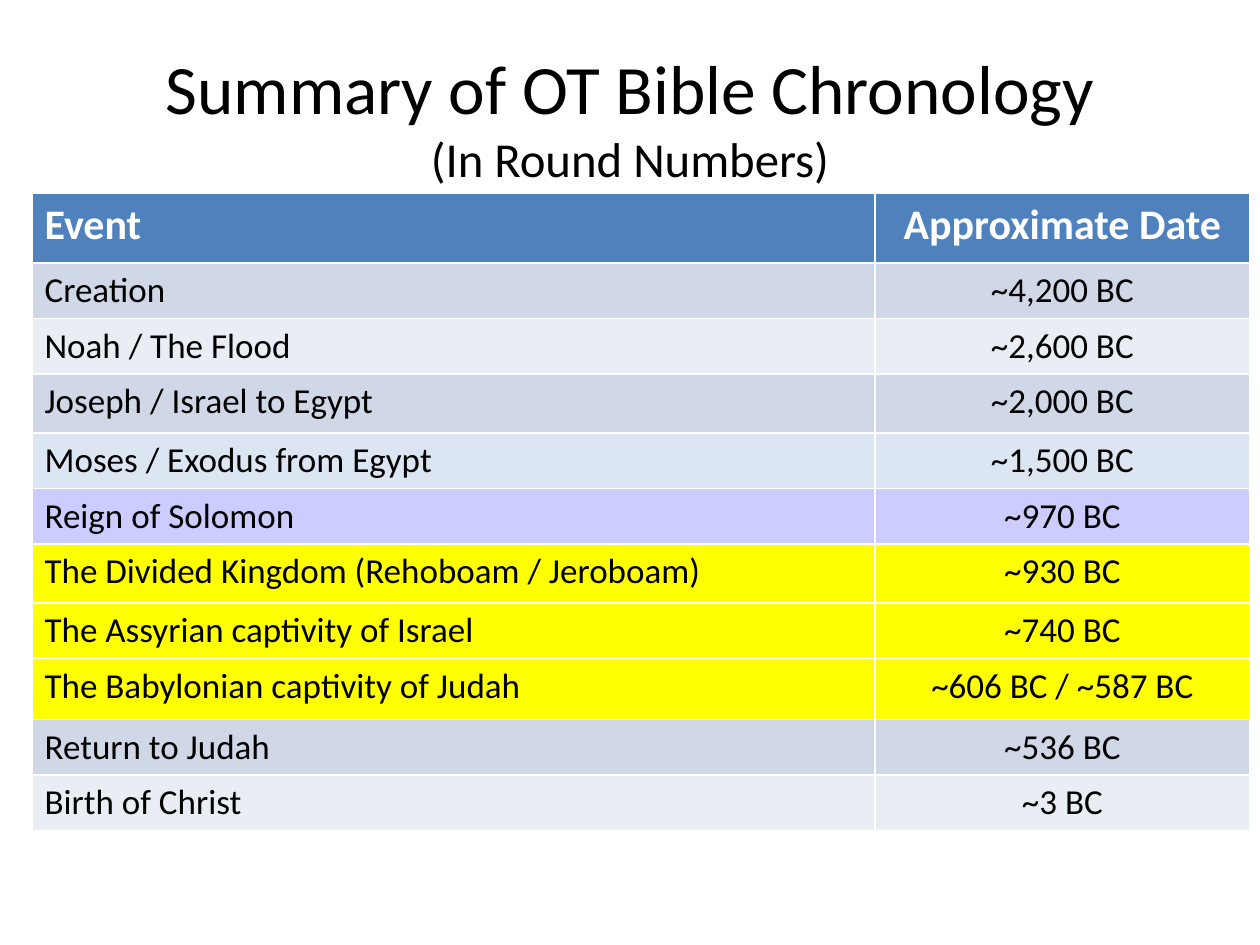
from dataclasses import dataclass
from lxml.etree import SubElement
from pptx import Presentation
from pptx.dml.color import RGBColor as RGB
from pptx.enum.text import MSO_ANCHOR as ANCHOR, MSO_AUTO_SIZE as FIT, PP_ALIGN as ALIGN
from pptx.oxml.ns import qn
from pptx.util import Pt


@dataclass(frozen=True)
class Theme:
    font: str = "Calibri"
    ink: str = "000000"
    white: str = "FFFFFF"
    header: str = "4F81BD"
    dark: str = "D0D8E8"
    light: str = "E9EDF4"
    pale: str = "DCE6F2"
    lilac: str = "CCCCFF"
    yellow: str = "FFFF00"
    title: float = 39.6
    subtitle: float = 27.9
    heading: int = 24
    body: int = 20


T = Theme()
PX = 914400 // 126


def add_run(p, text, size, color, bold=False):
    r = p.add_run()
    r.text = text
    r.font.name = T.font
    r.font.size = Pt(size)
    r.font.bold = bold
    r.font.color.rgb = RGB.from_string(color)


prs = Presentation()
prs.slide_width = 1260 * PX
prs.slide_height = 945 * PX
s = prs.slides.add_slide(prs.slide_layouts[5])

title = s.shapes.title
title.left, title.top, title.width, title.height = (v * PX for v in (63, 38, 1134, 157))
tf = title.text_frame
tf.auto_size = FIT.NONE
tf.word_wrap = True
tf.vertical_anchor = ANCHOR.MIDDLE
p = tf.paragraphs[0]
p.alignment = ALIGN.CENTER
add_run(p, "Summary of OT Bible Chronology", T.title, T.ink)
p.add_line_break()
SubElement(p._p[-1], qn("a:rPr"), sz=str(round(T.title * 100)))
add_run(p, "(In Round Numbers)", T.subtitle, T.ink)

rows = [
    ("Event", "Approximate Date", T.header, 70),
    ("Creation", "~4,200 BC", T.dark, 55),
    ("Noah / The Flood", "~2,600 BC", T.light, 55),
    ("Joseph / Israel to Egypt", "~2,000 BC", T.dark, 59),
    ("Moses / Exodus from Egypt", "~1,500 BC", T.pale, 55),
    ("Reign of Solomon", "~970 BC", T.lilac, 55),
    ("The Divided Kingdom (Rehoboam / Jeroboam)", "~930 BC", T.yellow, 59),
    ("The Assyrian captivity of Israel", "~740 BC", T.yellow, 55),
    ("The Babylonian captivity of Judah", "~606 BC / ~587 BC", T.yellow, 61),
    ("Return to Judah", "~536 BC", T.dark, 55),
    ("Birth of Christ", "~3 BC", T.light, 55),
]
widths = (843, 375)
height = sum(row[-1] for row in rows)
frame = s.shapes.add_table(len(rows), 2, 32 * PX, 193 * PX, sum(widths) * PX, height * PX)
table = frame.table
for column, width in zip(table.columns, widths):
    column.width = width * PX

for i, (event, date, fill, row_height) in enumerate(rows):
    table.rows[i].height = row_height * PX
    size, color = (T.body, T.ink) if i else (T.heading, T.white)
    for j, (text, align) in enumerate(((event, ALIGN.LEFT), (date, ALIGN.CENTER))):
        cell = table.cell(i, j)
        cell.fill.solid()
        cell.fill.fore_color.rgb = RGB.from_string(fill)
        p = cell.text_frame.paragraphs[0]
        p.alignment = align
        add_run(p, text, size, color, bold=i == 0)

prs.save("out.pptx")
